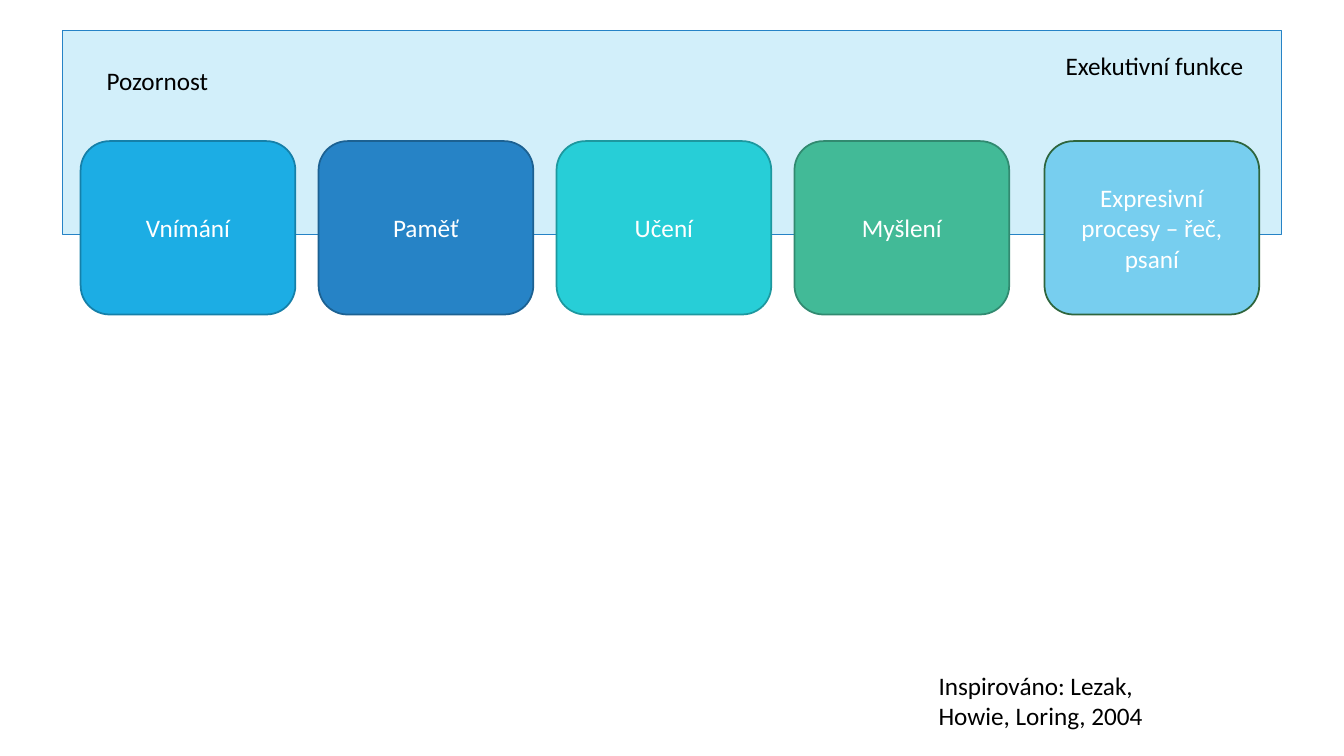
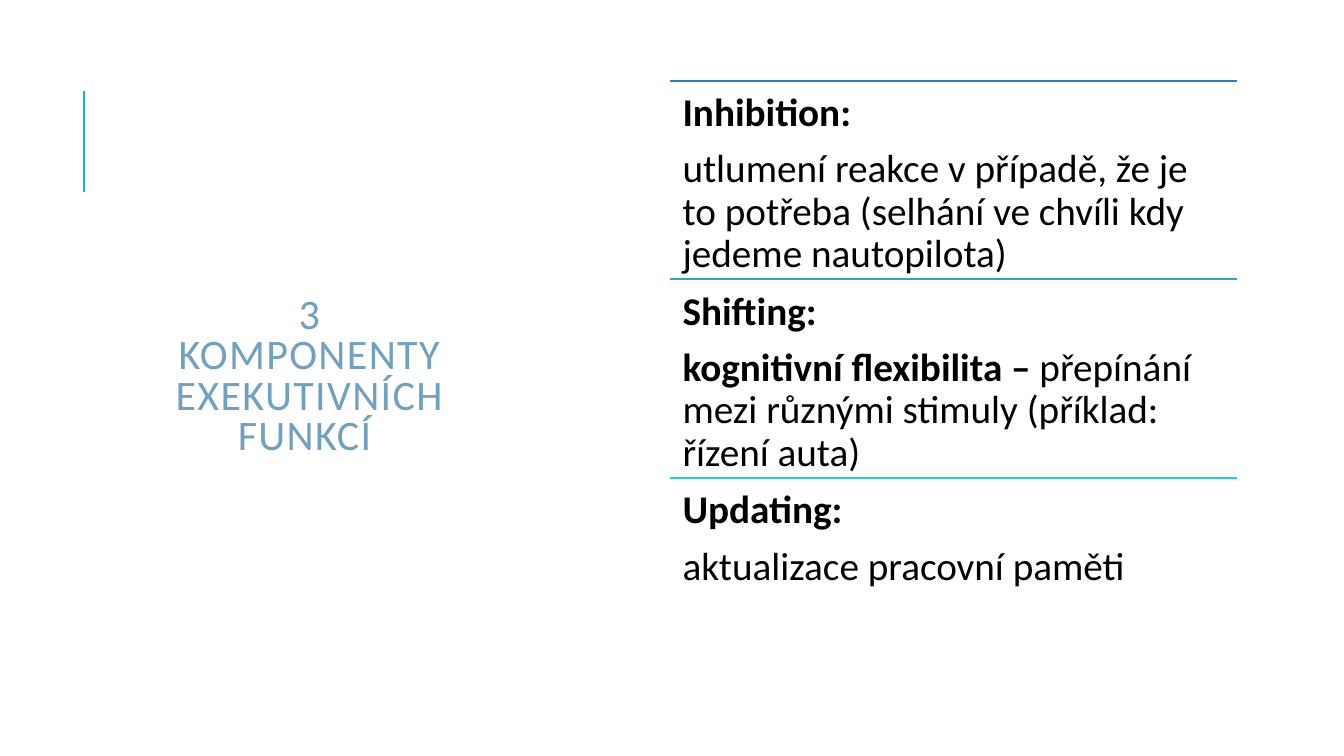
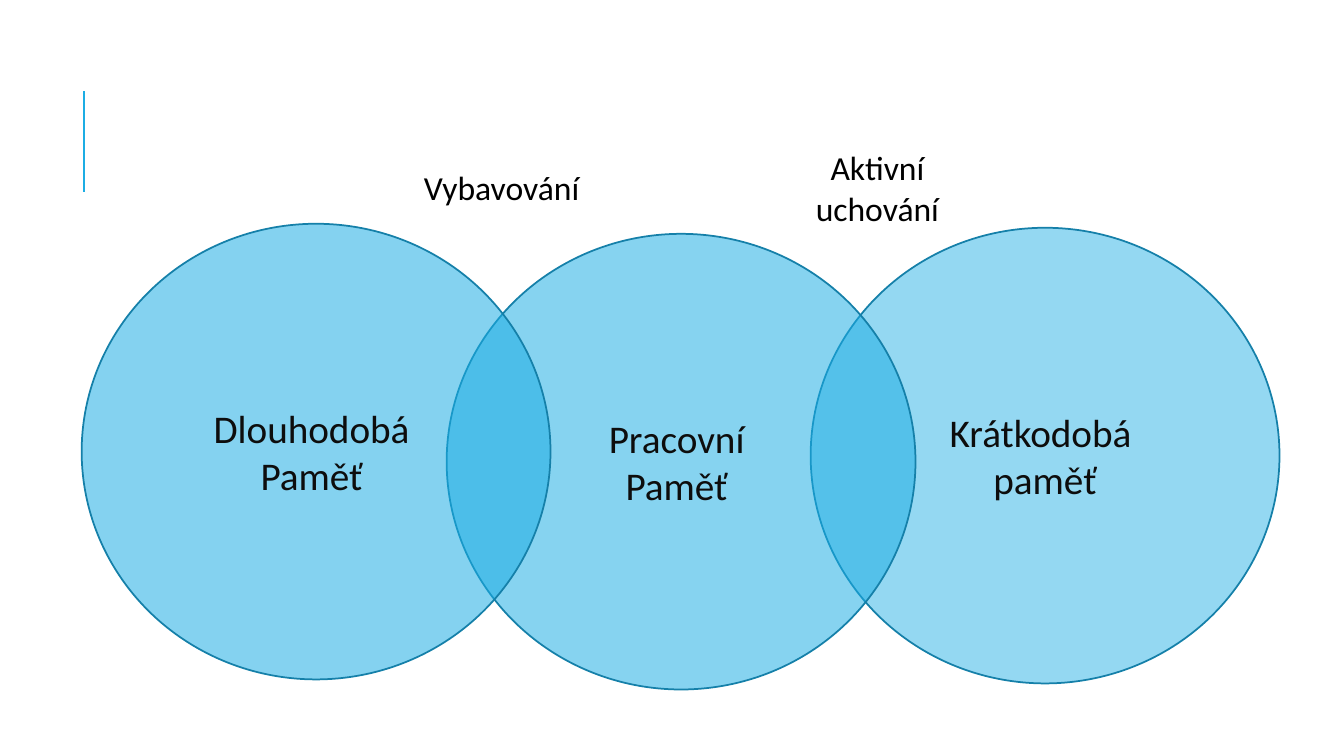
"""Build three slides on attention, executive functions and memory."""
from typing import NamedTuple

from lxml import etree
from pptx import Presentation
from pptx.dml.color import RGBColor
from pptx.enum.shapes import MSO_CONNECTOR, MSO_SHAPE
from pptx.enum.text import MSO_ANCHOR, MSO_AUTO_SIZE, PP_ALIGN
from pptx.oxml.ns import qn
from pptx.util import Inches, Pt

RECT, ROUND, OVAL = MSO_SHAPE.RECTANGLE, MSO_SHAPE.ROUNDED_RECTANGLE, MSO_SHAPE.OVAL
LEFT, CENTER = PP_ALIGN.LEFT, PP_ALIGN.CENTER
TOP, MIDDLE = MSO_ANCHOR.TOP, MSO_ANCHOR.MIDDLE
STRAIGHT = MSO_CONNECTOR.STRAIGHT
TITLE_ONLY, BLANK = 5, 6
FONT = "Calibri"
COLORS = {
    "black": "000000", "ink": "0D0D0D", "white": "FFFFFF", "title": "70A1C0",
    "band": "D2EFFA", "sky": "1CADE4", "sky_edge": "1580A9",
    "blue": "2683C6", "blue_edge": "1C6192", "aqua": "27CED7", "aqua_edge": "1D989F",
    "green": "42BA97", "green_edge": "318A70", "pale": "77CEEF", "pale_edge": "2E653D",
    "mid": "27A7CE",
}


class Box(NamedTuple):
    left: float
    top: float
    width: float
    height: float


class Run(NamedTuple):
    text: str
    bold: bool = False


class Card(NamedTuple):
    text: str
    color: str
    shift: float = 0


class Part(NamedTuple):
    color: str
    head: str
    body: list[Run]


class Circle(NamedTuple):
    lines: list[str]
    left: float
    top: float
    alpha: int


class Label(NamedTuple):
    lines: list[str]
    box: Box


CARDS = [
    Card("Vnímání", "sky"),
    Card("Paměť", "blue"),
    Card("Učení", "aqua"),
    Card("Myšlení", "green"),
    Card("Expresivní procesy – řeč, psaní", "pale", 0.12),
]
NOTES = [
    Label(["Exekutivní funkce"], Box(10.47, 0.45, 2.13, 0.71)),
    Label(["Inspirováno: Lezak, Howie, Loring, 2004"], Box(9.21, 6.6, 2.89, 0.71)),
    Label(["Pozornost"], Box(0.96, 0.6, 2.13, 0.4)),
]
PARTS = [
    Part("blue", "Inhibition:", [
        Run("utlumení reakce v případě, že je to potřeba "
            "(selhání ve chvíli kdy jedeme nautopilota)")]),
    Part("mid", "Shifting:", [
        Run("kognitivní flexibilita – ", True),
        Run("přepínání mezi různými stimuly (příklad: řízení auta)")]),
    Part("aqua", "Updating:", [Run("aktualizace pracovní paměti")]),
]
CIRCLES = [
    Circle(["Krátkodobá ", "paměť"], 8.04, 2.26, 47),
    Circle(["Pracovní ", "Paměť "], 4.43, 2.32, 53),
    Circle(["Dlouhodobá ", "Paměť "], 0.81, 2.22, 54),
]
LABELS = [
    Label(["Aktivní ", "uchování "], Box(7.98, 1.41, 1.52, 0.91)),
    Label(["Vybavování"], Box(4.06, 1.61, 1.83, 0.5)),
]


def paint(name: str) -> RGBColor:
    """Return a named colour."""
    return RGBColor.from_string(COLORS[name])


def place(box: Box) -> list[int]:
    """Return the box as lengths."""
    return [Inches(side) for side in box]


def write(frame, paras, *, size=18, color="black", align=LEFT, anchor=TOP,
          wrap=True, inset=None, leading=None, after=None, track=None) -> None:
    """Fill a text frame with paragraphs of strings or runs."""
    frame.word_wrap = wrap
    frame.auto_size = MSO_AUTO_SIZE.NONE
    frame.vertical_anchor = anchor
    if inset is not None:
        frame.margin_left = frame.margin_right = Inches(inset)
        frame.margin_top = frame.margin_bottom = Inches(inset)
    for index, para in enumerate(paras):
        line = frame.add_paragraph() if index else frame.paragraphs[0]
        line.alignment = align
        if leading:
            line.line_spacing = leading
        if after:
            line.space_after = Pt(after)
        for part in [Run(para)] if isinstance(para, str) else para:
            run = line.add_run()
            run.text = part.text
            font = run.font
            font.name, font.size, font.bold = FONT, Pt(size), part.bold
            font.color.rgb = paint(color)
            if track:
                font._element.set("spc", str(track * 100))


def add_text(slide, box: Box, paras, **style) -> None:
    """Add a text box."""
    write(slide.shapes.add_textbox(*place(box)).text_frame, paras, **style)


def add_form(slide, kind, box: Box, fill: str, edge: str, weight=1.25, alpha=None):
    """Add a filled preset shape."""
    shape = slide.shapes.add_shape(kind, *place(box))
    shape.shadow.inherit = False
    shape.fill.solid()
    shape.fill.fore_color.rgb = paint(fill)
    shape.line.color.rgb = paint(edge)
    shape.line.width = Pt(weight)
    if alpha:
        tint = shape._element.spPr.find(qn("a:solidFill")).find(qn("a:srgbClr"))
        etree.SubElement(tint, qn("a:alpha")).set("val", str(alpha * 1000))
    return shape


def add_line(slide, x: float, y: float, end_x: float, end_y: float,
             color: str, weight=1.25) -> None:
    """Add a straight line without a shadow."""
    line = slide.shapes.add_connector(
        STRAIGHT, Inches(x), Inches(y), Inches(end_x), Inches(end_y))
    line.line.color.rgb = paint(color)
    line.line.width = Pt(weight)
    etree.SubElement(line._element.spPr, qn("a:effectLst"))


def add_slide(deck, layout: int, accent=True):
    """Add a slide with the shared accent line."""
    slide = deck.slides.add_slide(deck.slide_layouts[layout])
    if accent:
        add_line(slide, 0.83, 1.9, 0.83, 0.9, "sky", 1.5)
    return slide


def draw_process(deck) -> None:
    """Draw the row of cognitive processes."""
    slide = add_slide(deck, BLANK, accent=False)
    add_form(slide, RECT, Box(0.62, 0.3, 12.09, 2.03), "band", "blue", 0.75)
    for index, card in enumerate(CARDS):
        box = Box(0.8 + index * 2.36 + card.shift, 1.4, 2.13, 1.72)
        shape = add_form(slide, ROUND, box, card.color, card.color + "_edge")
        write(shape.text_frame, [card.text], color="white", align=CENTER, anchor=MIDDLE)
    for note in NOTES:
        add_text(slide, note.box, note.lines)


def draw_parts(deck) -> None:
    """Draw the three components of executive functions."""
    slide = add_slide(deck, TITLE_ONLY)
    title = slide.shapes.title
    title.left, title.top, title.width, title.height = place(Box(1.63, 2.6, 2.89, 2.3))
    write(title.text_frame, ["3 KOMPONENTY EXEKUTIVNÍCH FUNKCÍ "], size=30,
          color="title", align=CENTER, anchor=MIDDLE, leading=0.8, track=1)
    left, width, step = 6.65, 5.62, 1.97
    for index, part in enumerate(PARTS):
        top = 0.8 + index * step
        add_line(slide, left, top, left + width, top, part.color)
        add_text(slide, Box(left, top, width, step), [[Run(part.head, True)], part.body],
                 size=28, inset=0.12, leading=0.9, after=10)


def draw_memory(deck) -> None:
    """Draw the overlapping kinds of memory."""
    slide = add_slide(deck, BLANK)
    for ring in CIRCLES:
        shape = add_form(slide, OVAL, Box(ring.left, ring.top, 4.65, 4.52),
                         "sky", "sky_edge", alpha=ring.alpha)
        write(shape.text_frame, ring.lines, size=28, color="ink",
              align=CENTER, anchor=MIDDLE)
    for label in LABELS:
        add_text(slide, label.box, label.lines, size=24, align=CENTER, wrap=False)


def main() -> None:
    """Build and save the deck."""
    deck = Presentation()
    deck.slide_width, deck.slide_height = Inches(13.33), Inches(7.5)
    draw_process(deck)
    draw_parts(deck)
    draw_memory(deck)
    deck.save("out.pptx")


if __name__ == "__main__":
    main()
